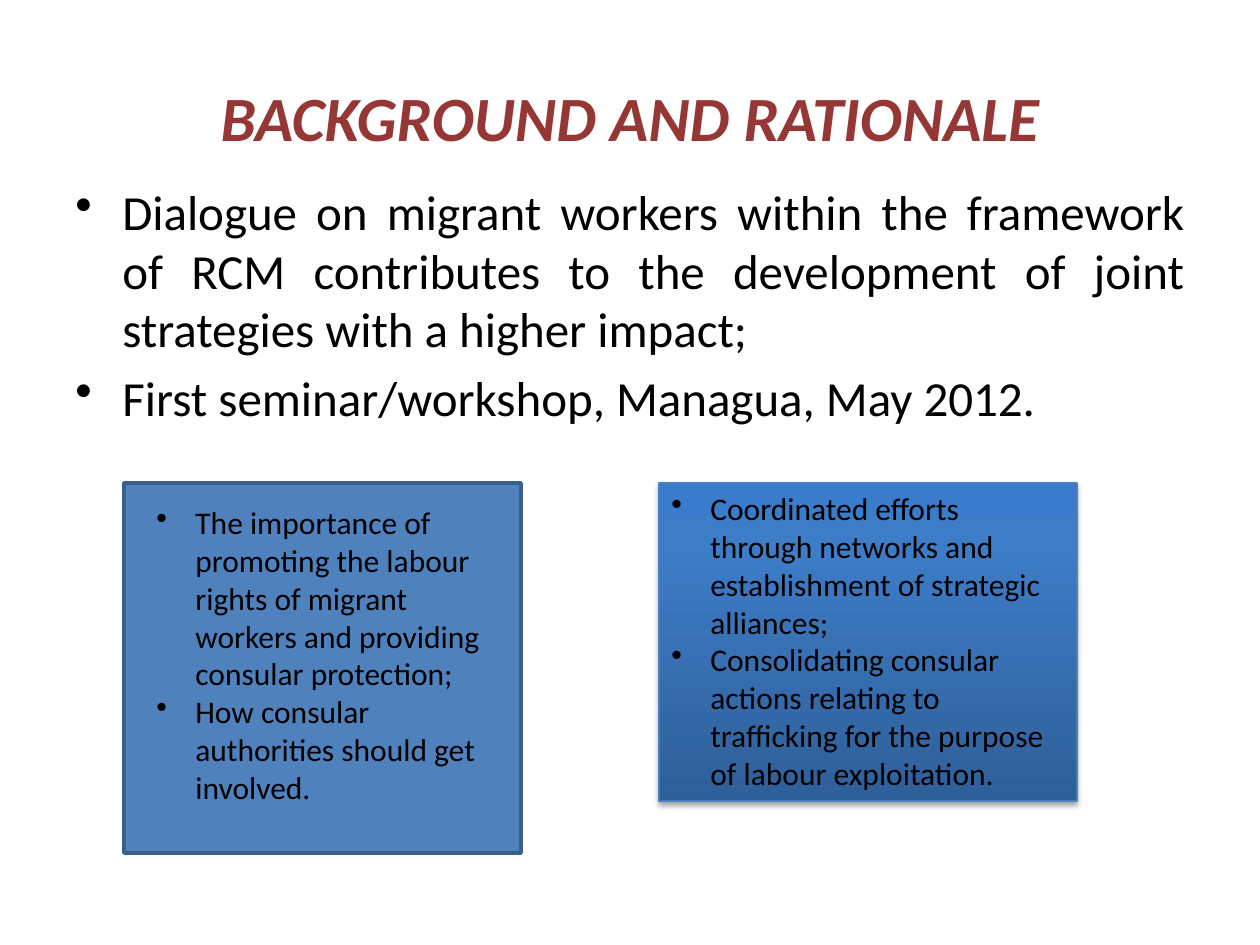
from copy import deepcopy

from lxml.etree import SubElement
from pptx import Presentation
from pptx.dml.color import RGBColor
from pptx.enum.shapes import MSO_SHAPE
from pptx.enum.text import MSO_ANCHOR, PP_ALIGN
from pptx.oxml.ns import qn
from pptx.util import Emu, Pt

EMU_PER_PX = 914400 / 126

FONT = "Calibri"
MAROON = RGBColor(0x95, 0x37, 0x35)
BLACK = RGBColor(0x00, 0x00, 0x00)
BLUE = RGBColor(0x4F, 0x81, 0xBD)
BLUE_EDGE = RGBColor(0x3A, 0x5F, 0x8C)
GRADIENT_EDGE = RGBColor(0x4B, 0x7E, 0xBC)
GRADIENT = [
    (0, RGBColor(0x2F, 0x5F, 0x99)),
    (0.8, RGBColor(0x3D, 0x7C, 0xC7)),
    (1, RGBColor(0x3A, 0x7C, 0xCB)),
]

TITLE = "BACKGROUND AND RATIONALE"
MAIN_POINTS = [
    "Dialogue on migrant workers within the framework of RCM contributes "
    "to the development of joint strategies with a higher impact;",
    "First seminar/workshop, Managua, May 2012.",
]
RIGHTS_POINTS = [
    "The importance of promoting the labour rights of migrant workers and "
    "providing consular protection;",
    "How consular authorities should get involved.",
]
ALLIANCE_POINTS = [
    "Coordinated efforts through networks and establishment of strategic alliances;",
    "Consolidating consular actions relating to trafficking for the purpose "
    "of labour exploitation.",
]


def px(length):
    return Emu(round(length * EMU_PER_PX))


def add_text_frame(slide, box):
    frame = slide.shapes.add_textbox(*map(px, box)).text_frame
    frame.word_wrap = True
    return frame


def add_panel(slide, box, edge, edge_width):
    panel = slide.shapes.add_shape(MSO_SHAPE.RECTANGLE, *map(px, box))
    panel.shadow.inherit = False
    panel.line.color.rgb = edge
    panel.line.width = Pt(edge_width)
    return panel


def add_run(paragraph, text, size, color):
    run = paragraph.add_run()
    run.text = text
    run.font.name = FONT
    run.font.size = Pt(size)
    run.font.color.rgb = color
    return run


def write_bullets(frame, points, size, indent, align=PP_ALIGN.LEFT, space_before=0):
    frame.word_wrap = True
    frame.vertical_anchor = MSO_ANCHOR.TOP
    for index, point in enumerate(points):
        paragraph = frame.add_paragraph() if index else frame.paragraphs[0]
        paragraph.alignment = align
        paragraph.space_before = Pt(space_before)
        properties = paragraph._p.get_or_add_pPr()
        properties.set("marL", str(px(indent)))
        properties.set("indent", str(-px(indent)))
        SubElement(properties, qn("a:buChar"), char="•")
        add_run(paragraph, point, size, BLACK)


def fill_gradient(panel):
    panel.fill.gradient()
    panel.fill.gradient_angle = 90
    last_stop = panel.fill.gradient_stops[-1]._gs
    last_stop.addnext(deepcopy(last_stop))
    for stop, (position, color) in zip(panel.fill.gradient_stops, GRADIENT):
        stop.position = position
        stop.color.rgb = color


def cast_shadow(panel):
    effects = panel._element.spPr.find(qn("a:effectLst"))
    shadow = SubElement(effects, qn("a:outerShdw"), blurRad=str(Pt(3.1)),
                        dist=str(Pt(1.8)), dir="5400000", rotWithShape="0")
    color = SubElement(shadow, qn("a:srgbClr"), val=str(BLACK))
    SubElement(color, qn("a:alpha"), val="35000")


def title_region(slide, box):
    frame = add_text_frame(slide, box)
    frame.vertical_anchor = MSO_ANCHOR.MIDDLE
    paragraph = frame.paragraphs[0]
    paragraph.alignment = PP_ALIGN.CENTER
    heading = add_run(paragraph, TITLE, 36, MAROON)
    heading.font.bold = True
    heading.font.italic = True


def main_points_region(slide, box):
    write_bullets(add_text_frame(slide, box), MAIN_POINTS, 28, 47,
                  PP_ALIGN.JUSTIFY, space_before=5.6)


def rights_region(slide, box):
    left, top, width, _ = box
    panel = add_panel(slide, box, BLUE_EDGE, 2)
    panel.fill.solid()
    panel.fill.fore_color.rgb = BLUE
    # Text sits centred across the panel
    inset = 20
    text_box = (left + inset, top + 14, width - 2 * inset, 318)
    write_bullets(add_text_frame(slide, text_box), RIGHTS_POINTS, 18, 39)


def alliances_region(slide, box):
    panel = add_panel(slide, box, GRADIENT_EDGE, 0.75)
    fill_gradient(panel)
    cast_shadow(panel)
    write_bullets(panel.text_frame, ALLIANCE_POINTS, 18, 39)


def main():
    presentation = Presentation()
    presentation.slide_width = px(1260)
    presentation.slide_height = px(945)
    slide = presentation.slides.add_slide(presentation.slide_layouts[6])

    # Heading and main points
    title_region(slide, (63, 38, 1134, 157))
    main_points_region(slide, (63, 175, 1134, 669))

    # Two panels on a common top edge
    panel_top = 483
    rights_region(slide, (124, panel_top, 397, 370))
    alliances_region(slide, (659, panel_top, 418, 318))

    presentation.save("out.pptx")


if __name__ == "__main__":
    main()
